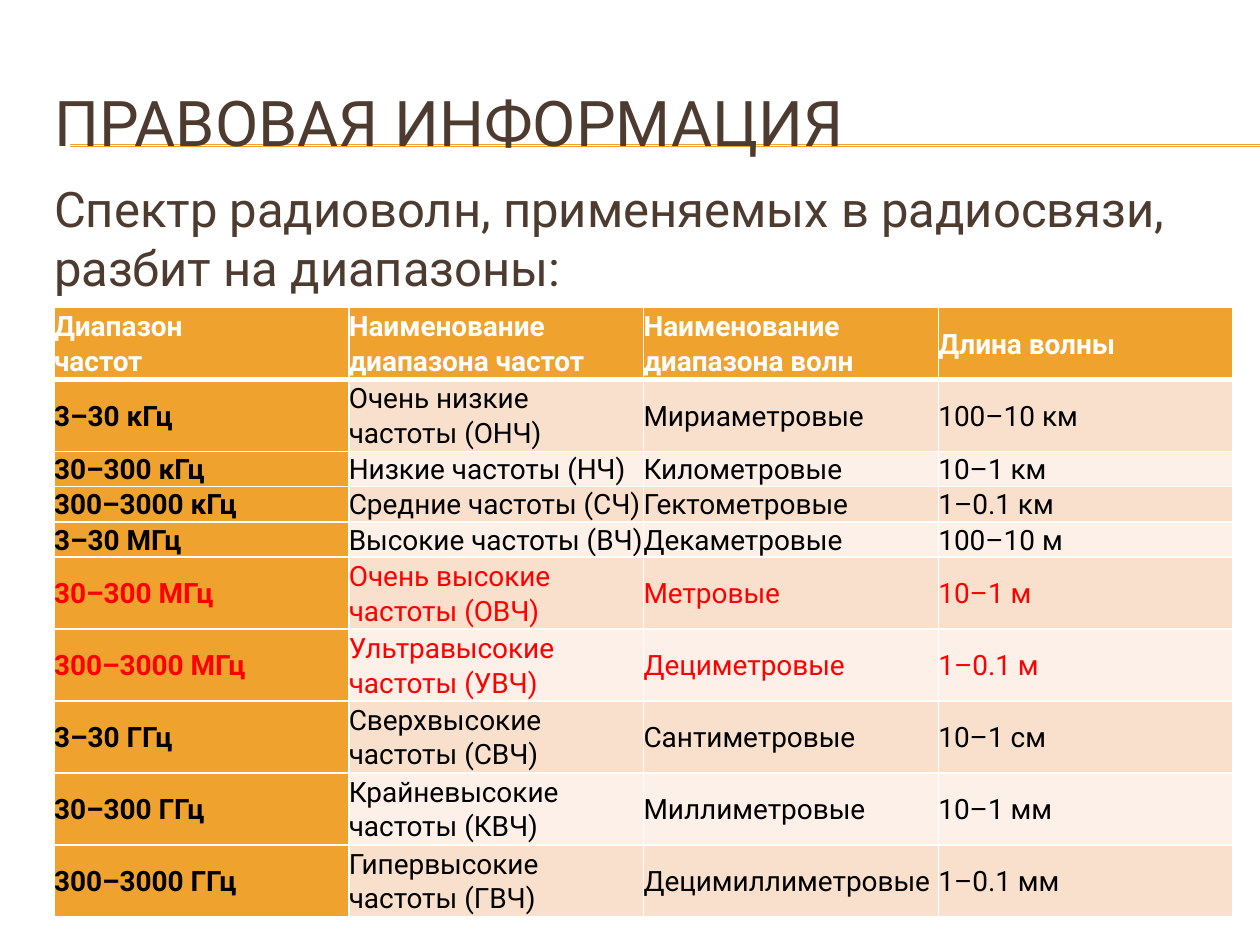
from dataclasses import dataclass

from pptx import Presentation
from pptx.dml.color import RGBColor
from pptx.enum.shapes import MSO_CONNECTOR
from pptx.enum.text import MSO_ANCHOR, PP_ALIGN
from pptx.oxml import parse_xml
from pptx.oxml.ns import nsdecls
from pptx.oxml.xmlchemy import OxmlElement
from pptx.util import Cm, Pt

FONT = "Roboto"
ORANGE, BROWN, WHITE, BLACK, RED = "F0A22E", "4E3B30", "FFFFFF", "000000", "FF0000"
BAND_FILLS = ("F9E0CD", "FCF0E8")
TALL_ROW, SHORT_ROW = Cm(1.45), Cm(0.71)


@dataclass(frozen=True)
class Band:
    frequency: str
    name: str
    waves: str
    length: str
    color: str = BLACK
    height: int = TALL_ROW


HEADINGS = (
    "Диапазон\vчастот",
    "Наименование диапазона частот",
    "Наименование\vдиапазона волн",
    "Длина волны",
)
BANDS = (
    Band("3–30 кГц", "Очень низкие частоты (ОНЧ)", "Мириаметровые", "100–10 км"),
    Band("30–300 кГц", "Низкие частоты (НЧ)", "Километровые", "10–1 км", height=SHORT_ROW),
    Band("300–3000 кГц", "Средние частоты (СЧ)", "Гектометровые", "1–0.1 км", height=SHORT_ROW),
    Band("3–30 МГц", "Высокие частоты (ВЧ)", "Декаметровые", "100–10 м", height=SHORT_ROW),
    Band("30–300 МГц", "Очень высокие частоты (ОВЧ)", "Метровые", "10–1 м", RED),
    Band("300–3000 МГц", "Ультравысокие частоты (УВЧ)", "Дециметровые", "1–0.1 м", RED),
    Band("3–30 ГГц", "Сверхвысокие частоты (СВЧ)", "Сантиметровые", "10–1 см"),
    Band("30–300 ГГц", "Крайневысокие частоты (КВЧ)", "Миллиметровые", "10–1 мм"),
    Band("300–3000 ГГц", "Гипервысокие частоты (ГВЧ)", "Децимиллиметровые", "1–0.1 мм"),
)


def rgb(color: str) -> RGBColor:
    return RGBColor.from_string(color)


def format_runs(frame, size: float, color: str, bold: bool = False) -> None:
    for paragraph in frame.paragraphs:
        for run in paragraph.runs:
            run.font.name = FONT
            run.font.size = Pt(size)
            run.font.bold = bold
            run.font.color.rgb = rgb(color)


def place(shape, left: float, top: float, width: float, height: float) -> None:
    """Position a shape, with all lengths in centimetres."""
    shape.left, shape.top = Cm(left), Cm(top)
    shape.width, shape.height = Cm(width), Cm(height)


def add_rule(slide, top: float) -> None:
    """Draw a thin line that runs to the right edge of the slide."""
    rule = slide.shapes.add_connector(
        MSO_CONNECTOR.STRAIGHT, Cm(1.42), Cm(top), Cm(25.4), Cm(top)
    )
    rule.line.color.rgb = rgb(ORANGE)
    rule.line.width = Pt(0.75)
    rule._element.spPr.append(OxmlElement("a:effectLst"))


def add_title(slide) -> None:
    title = slide.shapes.title
    place(title, 0.84, 1.27, 24.13, 2.34)
    frame = title.text_frame
    frame.text = "ПРАВОВАЯ ИНФОРМАЦИЯ"
    frame.vertical_anchor = MSO_ANCHOR.MIDDLE
    frame.paragraphs[0].alignment = PP_ALIGN.LEFT
    format_runs(frame, 36, BROWN)
    # The title lies in front of the rules.
    title._element.getparent().append(title._element)


def add_intro(slide) -> None:
    intro = slide.shapes.add_textbox(Cm(0.84), Cm(3.48), Cm(24.03), Cm(2.69))
    frame = intro.text_frame
    frame.word_wrap = True
    frame.text = "Спектр радиоволн, применяемых в радиосвязи, разбит на диапазоны:"
    frame.paragraphs[0].space_before = Pt(5.6)
    format_runs(frame, 28, BROWN)


def set_borders(cell, bottom: float) -> None:
    """Give a cell white borders of 1 pt, except for the bottom one."""
    properties = cell._tc.get_or_add_tcPr()
    widths = {"lnL": 1, "lnR": 1, "lnT": 1, "lnB": bottom}
    for position, (side, width) in enumerate(widths.items()):
        border = parse_xml(
            f'<a:{side} {nsdecls("a")} w="{Pt(width)}"><a:solidFill>'
            f'<a:srgbClr val="{WHITE}"/></a:solidFill></a:{side}>'
        )
        properties.insert(position, border)


def fill_cell(cell, text: str, fill: str, color: str, bold: bool, bottom: float = 1) -> None:
    cell.margin_left = cell.margin_right = cell.margin_top = cell.margin_bottom = 0
    cell.vertical_anchor = MSO_ANCHOR.MIDDLE
    cell.fill.solid()
    cell.fill.fore_color.rgb = rgb(fill)
    set_borders(cell, bottom)
    cell.text_frame.text = text
    paragraph = cell.text_frame.paragraphs[0]
    paragraph.line_spacing = 1.07
    paragraph.space_after = Pt(8)
    format_runs(cell.text_frame, 16, color, bold)


def add_band_table(slide) -> None:
    heights = [TALL_ROW] + [band.height for band in BANDS]
    table = slide.shapes.add_table(
        len(heights), len(HEADINGS), Cm(1.09), Cm(6.2), Cm(23.77), sum(heights)
    ).table
    table.first_col = True
    for row, height in zip(table.rows, heights):
        row.height = height
    for column, heading in enumerate(HEADINGS):
        fill_cell(table.cell(0, column), heading, ORANGE, WHITE, True, bottom=3)
    for row, band in enumerate(BANDS, start=1):
        band_fill = BAND_FILLS[(row - 1) % 2]
        fill_cell(table.cell(row, 0), band.frequency, ORANGE, band.color, True)
        for column, text in enumerate((band.name, band.waves, band.length), start=1):
            fill_cell(table.cell(row, column), text, band_fill, band.color, False,)


def main() -> None:
    presentation = Presentation()
    presentation.slide_width, presentation.slide_height = Cm(25.4), Cm(19.05)
    slide = presentation.slides.add_slide(presentation.slide_layouts[5])
    for top in (2.92, 2.95):
        add_rule(slide, top)
    add_title(slide)
    add_band_table(slide)
    add_intro(slide)
    presentation.save("out.pptx")


if __name__ == "__main__":
    main()
